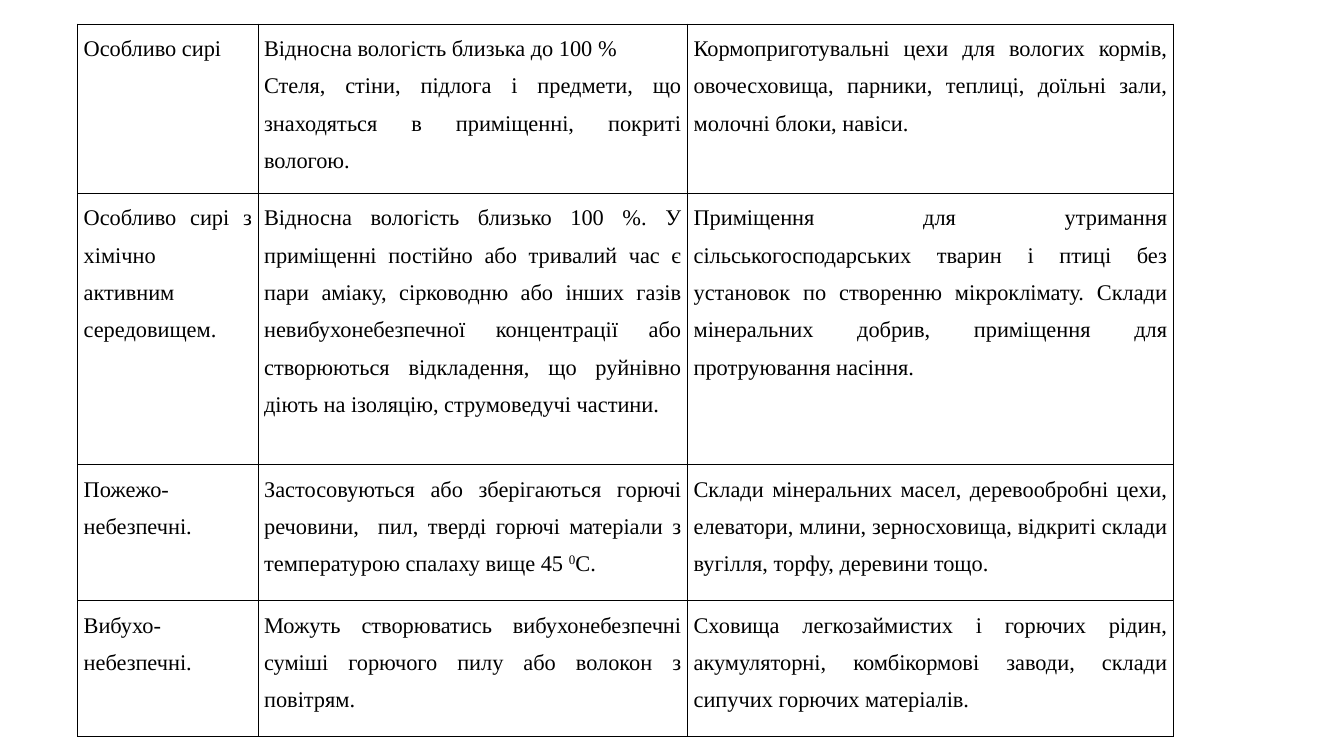
from lxml import etree
from pptx import Presentation
from pptx import util as u
from pptx.dml.color import RGBColor
from pptx.enum import text
from pptx.oxml import ns

BLACK = RGBColor(0, 0, 0)
WHITE = RGBColor(255, 255, 255)
SLIDE_SIZE = (u.Inches(13.33), u.Inches(7.5))
TABLE_BOX = (u.Inches(0.77), u.Inches(0.24), u.Inches(10.87), u.Inches(7.07))
COLUMN_WEIGHTS = (1.79, 4.26, 4.82)
ROW_WEIGHTS = (1.68, 2.69, 1.35, 1.35)
BORDER_SIDES = ("lnL", "lnR", "lnT", "lnB")

FONT_FORMAT = {"name": "Times New Roman", "size": u.Pt(16), "bold": False}
PARAGRAPH_FORMAT = {"alignment": text.PP_ALIGN.JUSTIFY, "line_spacing": 1.5}
CELL_FORMAT = {
    "margin_left": u.Inches(0.06),
    "margin_right": u.Inches(0.06),
    "margin_top": 0,
    "margin_bottom": 0,
    "vertical_anchor": text.MSO_ANCHOR.TOP,
}

# Text between two "^" marks is superscript; a line break starts a paragraph.
ROOM_CLASSES = (
    (
        "Особливо сирі",
        "Відносна вологість близька до 100 %\n"
        "Стеля, стіни, підлога і предмети, що знаходяться в приміщенні, "
        "покриті вологою.",
        "Кормоприготувальні цехи для вологих кормів, овочесховища, парники, "
        "теплиці, доїльні зали, молочні блоки, навіси.",
    ),
    (
        "Особливо сирі з хімічно активним середовищем.",
        "Відносна вологість близько 100 %. У приміщенні постійно або тривалий "
        "час є пари аміаку, сірководню або інших газів невибухонебезпечної "
        "концентрації або створюються відкладення, що руйнівно діють на "
        "ізоляцію, струмоведучі частини.",
        "Приміщення для утримання сільськогосподарських тварин і птиці без "
        "установок по створенню мікроклімату. Склади мінеральних добрив, "
        "приміщення для протруювання насіння.",
    ),
    (
        "Пожежо-небезпечні.",
        "Застосовуються або зберігаються горючі речовини,  пил, тверді горючі "
        "матеріали з температурою спалаху вище 45 ^0^С.",
        "Склади мінеральних масел, деревообробні цехи, елеватори, млини, "
        "зерносховища, відкриті склади вугілля, торфу, деревини тощо.",
    ),
    (
        "Вибухо-небезпечні.",
        "Можуть створюватись вибухонебезпечні суміші горючого пилу або "
        "волокон з повітрям.",
        "Сховища легкозаймистих і горючих рідин, акумуляторні, комбікормові "
        "заводи, склади сипучих горючих матеріалів.",
    ),
)


def apply_format(target, values):
    for name, value in values.items():
        setattr(target, name, value)


def set_borders(cell):
    properties = cell._tc.get_or_add_tcPr()
    for index, side in enumerate(BORDER_SIDES):
        line = etree.Element(ns.qn(f"a:{side}"), w=str(u.Pt(1)))
        fill = etree.SubElement(line, ns.qn("a:solidFill"))
        etree.SubElement(fill, ns.qn("a:srgbClr"), val=str(BLACK))
        properties.insert(index, line)


def write_paragraph(paragraph, content):
    apply_format(paragraph, PARAGRAPH_FORMAT)
    for index, part in enumerate(content.split("^")):
        run = paragraph.add_run()
        run.text = part
        apply_format(run.font, FONT_FORMAT)
        run.font.color.rgb = BLACK
        if index % 2:
            run._r.get_or_add_rPr().set("baseline", "30000")


def fill_cell(cell, content):
    apply_format(cell, CELL_FORMAT)
    cell.fill.solid()
    cell.fill.fore_color.rgb = WHITE
    set_borders(cell)
    frame = cell.text_frame
    for index, line in enumerate(content.split("\n")):
        paragraph = frame.add_paragraph() if index else frame.paragraphs[0]
        write_paragraph(paragraph, line)


def add_room_table(slide, box):
    left, top, width, height = box
    table = slide.shapes.add_table(
        len(ROW_WEIGHTS), len(COLUMN_WEIGHTS), left, top, width, height
    ).table
    table.first_row = table.horz_banding = False
    for column, weight in zip(table.columns, COLUMN_WEIGHTS):
        column.width = int(width * weight / sum(COLUMN_WEIGHTS))
    for row, weight, contents in zip(table.rows, ROW_WEIGHTS, ROOM_CLASSES):
        row.height = int(height * weight / sum(ROW_WEIGHTS))
        for cell, content in zip(row.cells, contents):
            fill_cell(cell, content)


def main():
    presentation = Presentation()
    presentation.slide_width, presentation.slide_height = SLIDE_SIZE
    slide = presentation.slides.add_slide(presentation.slide_layouts[6])
    add_room_table(slide, TABLE_BOX)
    presentation.save("out.pptx")


if __name__ == "__main__":
    main()
